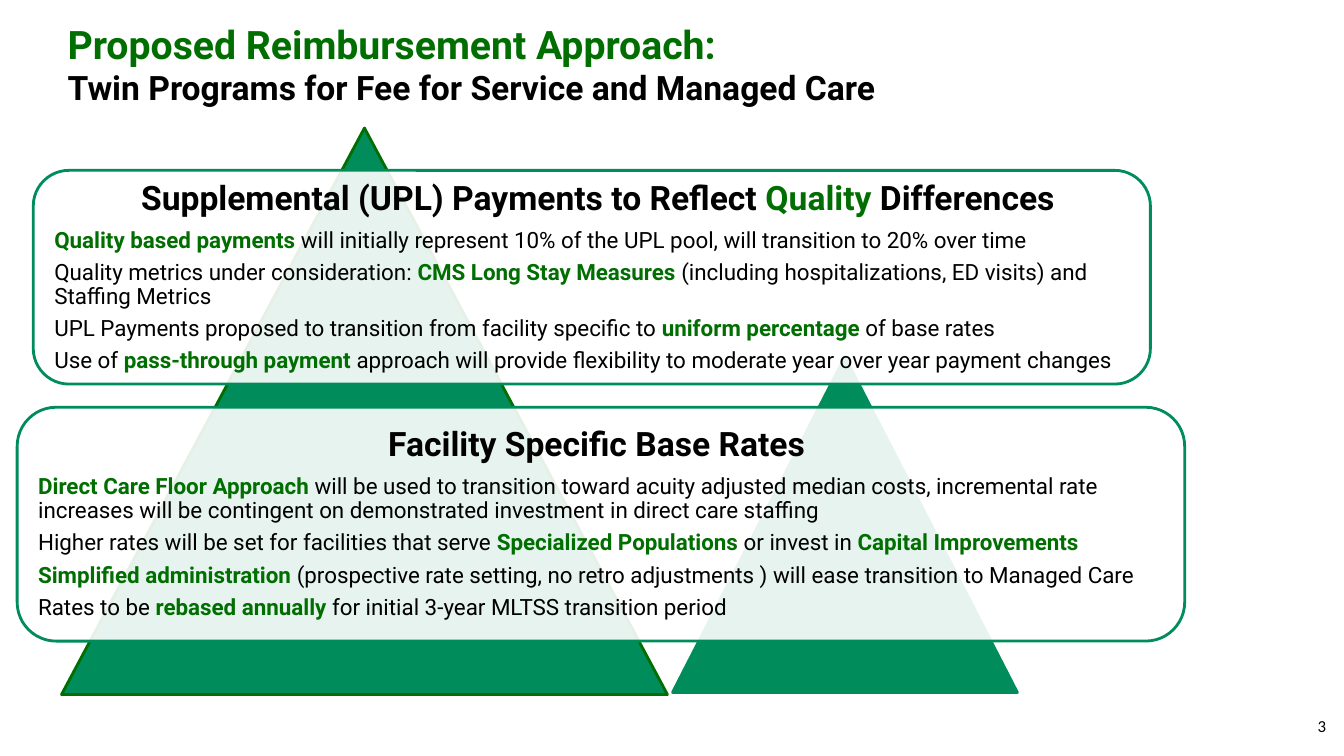
from lxml import etree
from pptx import Presentation
from pptx.dml.color import RGBColor
from pptx.enum.shapes import MSO_SHAPE
from pptx.enum.text import MSO_ANCHOR, MSO_AUTO_SIZE, PP_ALIGN
from pptx.oxml.ns import qn
from pptx.util import Inches, Pt

TRIANGLE, ROUNDED = MSO_SHAPE.ISOSCELES_TRIANGLE, MSO_SHAPE.ROUNDED_RECTANGLE
MIDDLE, NO_FIT = MSO_ANCHOR.MIDDLE, MSO_AUTO_SIZE.NONE
LEFT, CENTER, RIGHT = PP_ALIGN.LEFT, PP_ALIGN.CENTER, PP_ALIGN.RIGHT

TEAL = RGBColor(0x00, 0x8C, 0x5B)
GREEN = RGBColor(0x00, 0x6E, 0x00)
BLACK = RGBColor(0, 0, 0)
WHITE = RGBColor(255, 255, 255)

prs = Presentation()
prs.slide_width, prs.slide_height = Inches(13.33), Inches(7.5)
s = prs.slides.add_slide(prs.slide_layouts[5])


def add_outlined(kind, box, fill, line):
    sp = s.shapes.add_shape(kind, *map(Inches, box))
    sp.shadow.inherit = False
    sp.fill.solid()
    sp.fill.fore_color.rgb = fill
    sp.line.color.rgb = line
    sp.line.width = Pt(2)
    return sp


# Title
title = s.shapes.title
title.left, title.top, title.width, title.height = map(Inches, (0.57, 0.15, 10.42, 0.96))
tf = title.text_frame
tf.auto_size = NO_FIT
tf.vertical_anchor = MIDDLE
p = tf.paragraphs[0]
p.alignment = LEFT
p.font.name, p.font.bold = "Roboto", True
r = p.add_run()
r.text = "Proposed Reimbursement Approach:"
r.font.size, r.font.color.rgb = Pt(28), GREEN
p.add_line_break()
r = p.add_run()
r.text = "Twin Programs for Fee for Service and Managed Care"
r.font.size, r.font.color.rgb = Pt(24), BLACK

# Triangles behind the panels
add_outlined(TRIANGLE, (6.67, 3.54, 3.42, 3.33), TEAL, TEAL)
add_outlined(TRIANGLE, (0.61, 1.27, 6.01, 5.62), TEAL, GREEN)

# Panels: frame, text box, right inset, paragraphs; text between bars is green
panels = [
    ((0.33, 1.69, 11.08, 2.12), (0.44, 1.79, 10.88, 1.92), 0, [
        "Supplemental (UPL) Payments to Reflect |Quality |Differences",
        "|Quality based payments |will initially represent 10% of the UPL pool, "
        "will transition to 20% over time",
        "Quality metrics under consideration: |CMS Long Stay Measures |"
        "(including hospitalizations, ED visits) and Staffing Metrics",
        "UPL Payments proposed to transition from facility specific to "
        "|uniform percentage |of base rates",
        "Use of |pass-through payment |approach will provide flexibility "
        "to moderate year over year payment changes",
    ]),
    ((0.17, 4.04, 11.58, 2.32), (0.28, 4.15, 11.36, 2.09), 0.1, [
        "Facility Specific Base Rates ",
        "|Direct Care Floor Approach |will be used to transition toward acuity "
        "adjusted median costs, incremental rate increases will be contingent on "
        "demonstrated investment in direct care staffing",
        "Higher rates will be set for facilities that serve |Specialized Populations |"
        "or invest in |Capital Improvements",
        "|Simplified administration |(prospective rate setting, no retro adjustments ) "
        "will ease transition to Managed Care",
        "Rates to be |rebased annually |for initial 3-year MLTSS transition period",
    ]),
]
for frame, box, right_inset, lines in panels:
    sp = add_outlined(ROUNDED, frame, WHITE, TEAL)
    color = sp.fill._xPr.find(qn("a:solidFill"))[0]
    etree.SubElement(color, qn("a:alpha"), val="90000")

    tf = s.shapes.add_textbox(*map(Inches, box)).text_frame
    tf.word_wrap = True
    tf.vertical_anchor = MIDDLE
    tf.margin_left = tf.margin_top = tf.margin_bottom = Inches(0.1)
    tf.margin_right = Inches(right_inset)
    for i, line in enumerate(lines):
        heading = i == 0
        size = 24 if heading else 16
        p = tf.paragraphs[0] if heading else tf.add_paragraph()
        p.alignment = CENTER if heading else LEFT
        p.line_spacing = 0.9
        p.space_after = Pt(size * 0.35)
        p.font.name, p.font.size = "Roboto", Pt(size)
        for j, part in enumerate(line.split("|")):
            if part:
                accent = j % 2 == 1
                r = p.add_run()
                r.text = part
                r.font.bold = heading or accent
                r.font.color.rgb = GREEN if accent else BLACK

# Slide number
tf = s.shapes.add_textbox(Inches(11), Inches(7), Inches(2.25), Inches(0.4)).text_frame
tf.word_wrap = True
tf.vertical_anchor = MIDDLE
p = tf.paragraphs[0]
p.text = "3"
p.alignment = RIGHT
p.font.name, p.font.size, p.font.color.rgb = "Calibri", Pt(12), BLACK

prs.save("out.pptx")
